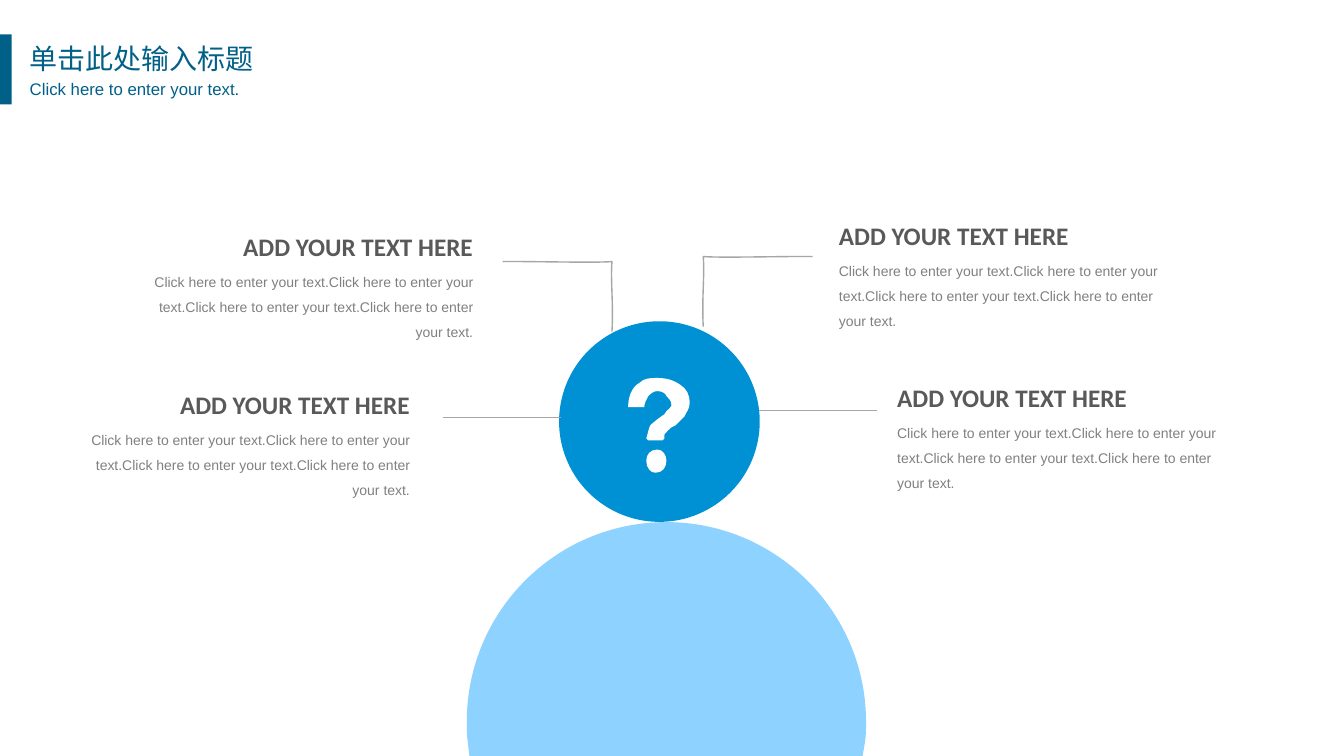
from pptx import Presentation
from pptx import util as u
from pptx.dml.color import RGBColor
from pptx.enum import shapes, text
from pptx.oxml.ns import qn
from lxml import etree

# Grid: 133.3 columns by 75 rows, each a tenth of an inch.
CELL = u.Inches(0.1)
COLS, ROWS = 133.3, 75
INK = {"navy": "006088", "blue": "0091D4", "sky": "8ED2FF", "white": "FFFFFF",
       "line": "A6A6A6", "head": "595959", "body": "808080"}
ALIGN = text.PP_ALIGN
HEAD = "ADD YOUR TEXT HERE"
LINE = "Click here to enter your text."

# A pair is a point; six numbers are two control points and an end point.
TORSO = [(46.6, 75.4), (85.5, 75.4), (85.8, 73.6),
         (85.9, 73, 85.9, 72.3, 85.9, 71.6), (85.9, 60.7, 77, 51.8, 66.1, 51.8),
         (55.1, 51.8, 46.3, 60.7, 46.3, 71.6), (46.3, 72.3, 46.3, 73, 46.4, 73.6)]
HOOK = [(67.5, 38.2),
        (66.8, 37.7, 66.1, 37.5, 65.2, 37.5), (64.5, 37.5, 63.9, 37.5, 63.4, 38),
        (62.7, 38.4, 62.3, 39.3, 62.3, 40.4), (63.9, 40.4),
        (63.9, 40, 64.1, 39.7, 64.3, 39.3), (64.5, 39.1, 64.8, 38.8, 65.2, 38.8),
        (65.7, 38.8, 66.1, 39.1, 66.1, 39.3), (66.3, 39.5, 66.6, 39.7, 66.6, 40.2),
        (66.6, 40.4, 66.3, 40.6, 66.1, 40.8), (65.9, 41.1),
        (65.9, 41.1, 65, 41.7, 64.5, 42.2), (64.3, 42.6, 64.3, 42.9, 64.1, 43.5),
        (64.3, 43.7), (65.7, 43.7), (65.9, 43.5),
        (65.9, 43.3, 65.9, 43.3, 65.9, 43.1), (66.1, 42.9, 66.3, 42.6, 66.6, 42.4),
        (67, 42.2), (67.5, 41.7, 67.7, 41.5, 67.9, 41.3),
        (68.1, 40.8, 68.4, 40.6, 68.4, 40), (68.4, 39.1, 68.1, 38.6, 67.5, 38.2)]
DOT = [(65.2, 44.6),
       (64.5, 44.6, 64.1, 45.1, 64.1, 45.7), (64.1, 46.4, 64.5, 46.9, 65, 46.9),
       (65.7, 46.9, 66.1, 46.4, 66.1, 45.7), (66.1, 45.1, 65.7, 44.6, 65.2, 44.6)]


def cells(*sizes):
    return [round(s * CELL) for s in sizes]


def paint(shape, fill=None, line=None):
    shape.shadow.inherit = False
    for part, ink in ((shape.fill, fill), (shape.line.fill, line)):
        if ink:
            part.solid()
            part.fore_color.rgb = RGBColor.from_string(INK[ink])
        else:
            part.background()
    if line:
        shape.line.width = u.Pt(1)


def bend(shape, steps):
    """Turn the straight segments that have control points into curves."""
    for seg, step in zip(list(shape._element.iter(qn("a:lnTo"))), steps):
        if len(step) == 6:
            curve = etree.Element(qn("a:cubicBezTo"))
            for x, y in zip(cells(*step[::2]), cells(*step[1::2])):
                etree.SubElement(curve, qn("a:pt"),
                                 x=str(x - shape.left), y=str(y - shape.top))
            seg.getparent().replace(seg, curve)


def outline(slide, loops, close=True, **look):
    pen = slide.shapes.build_freeform(*cells(*loops[0][0]))
    for i, (start, *steps) in enumerate(loops):
        if i:
            pen.move_to(*cells(*start))
        pen.add_line_segments([cells(*s[-2:]) for s in steps], close=close)
    shape = pen.convert_to_shape()
    bend(shape, [s for loop in loops for s in loop[1:]])
    paint(shape, **look)


def elbow(slide, x, y, way):
    """Draw a hand-drawn corner up from x, y; way is -1 for left, 1 for right."""
    up = (x - way * 0.15, y - 2.85, x + way * 0.15, y - 5.05, x, y - 6.95)
    out = (x + way * 1.55, y - 6.8, x + way * 9, y - 7, x + way * 10.85, y - 6.95)
    outline(slide, [[(x, y), up, out]], close=False, line="line")


def block(slide, kind, box, ink):
    paint(slide.shapes.add_shape(kind, *cells(*box)), fill=ink)


def rule(slide, x1, x2, y):
    line = slide.shapes.add_connector(shapes.MSO_CONNECTOR.STRAIGHT, *cells(x1, y, x2, y))
    line.line.width = u.Pt(1)
    line.line.color.rgb = RGBColor.from_string(INK["line"])
    etree.SubElement(line._element.spPr, qn("a:effectLst"))


def write(shape, words, ink, font, para, frame):
    """Fill a text shape; font, para and frame hold format values."""
    tf = shape.text_frame
    tf.text = words
    p = tf.paragraphs[0]
    base = {"word_wrap": True, "vertical_anchor": text.MSO_ANCHOR.TOP,
            "auto_size": text.MSO_AUTO_SIZE.SHAPE_TO_FIT_TEXT}
    face = p.runs[0].font
    for item, values in ((tf, base | frame), (p, para), (face, font)):
        for name, value in values.items():
            setattr(item, name, value)
    face.color.rgb = RGBColor.from_string(INK[ink])
    etree.SubElement(face._element, qn("a:ea"), typeface=font["name"])


def label(slide, box, *style):
    write(slide.shapes.add_textbox(*cells(*box)), *style)


def callout(slide, edge, top, side):
    """Set a heading over body text, both flush with one edge."""
    def box(y, wide, high):
        return (edge - wide if side == ALIGN.RIGHT else edge), y, wide, high
    label(slide, box(top, 24.8, 4), HEAD, "head",
          {"name": "Calibri", "size": u.Pt(18), "bold": True},
          {"alignment": side}, {"word_wrap": False})
    label(slide, box(top + 3.3, 34.8, 8.5), LINE * 4, "body",
          {"name": "Arial", "size": u.Pt(10)},
          {"alignment": side, "line_spacing": 1.5}, {})


def header(slide):
    title = slide.shapes.title
    title.left, title.top, title.width, title.height = cells(1.9, 3.6, 25.9, 4.6)
    write(title, "单击此处输入标题", "navy",
          {"name": "Noto Sans CJK SC", "size": u.Pt(20)},
          {"alignment": ALIGN.LEFT}, {})
    inset = {f"margin_{s}": u.Inches(0.04) for s in ("left", "right", "top", "bottom")}
    label(slide, (2.55, 7, 24.7, 3.2), LINE, "navy",
          {"name": "Arial", "size": u.Pt(12)},
          {"alignment": ALIGN.JUSTIFY, "line_spacing": 1.2, "space_before": u.Pt(2.4)}, inset)
    block(slide, shapes.MSO_SHAPE.RECTANGLE, (0, 3.4, 1.15, 6.95), "navy")


def figure(slide):
    outline(slide, [TORSO], fill="sky")
    block(slide, shapes.MSO_SHAPE.OVAL, (55.45, 31.87, 19.9, 19.9), "blue")
    outline(slide, [HOOK, DOT], fill="white")


def main():
    deck = Presentation()
    deck.slide_width, deck.slide_height = cells(COLS, ROWS)
    slide = deck.slides.add_slide(deck.slide_layouts[5])
    figure(slide)
    elbow(slide, 60.7, 32.9, -1)
    elbow(slide, 69.75, 32.4, 1)
    rule(slide, 43.95, 55.65, 41.45)
    rule(slide, 75.3, 87, 40.75)
    for edge, top, side in ((82.22, 21.37, ALIGN.LEFT), (88, 37.47, ALIGN.LEFT),
                            (41.63, 38.17, ALIGN.RIGHT), (47.9, 22.5, ALIGN.RIGHT)):
        callout(slide, edge, top, side)
    header(slide)
    deck.save("out.pptx")


if __name__ == "__main__":
    main()
